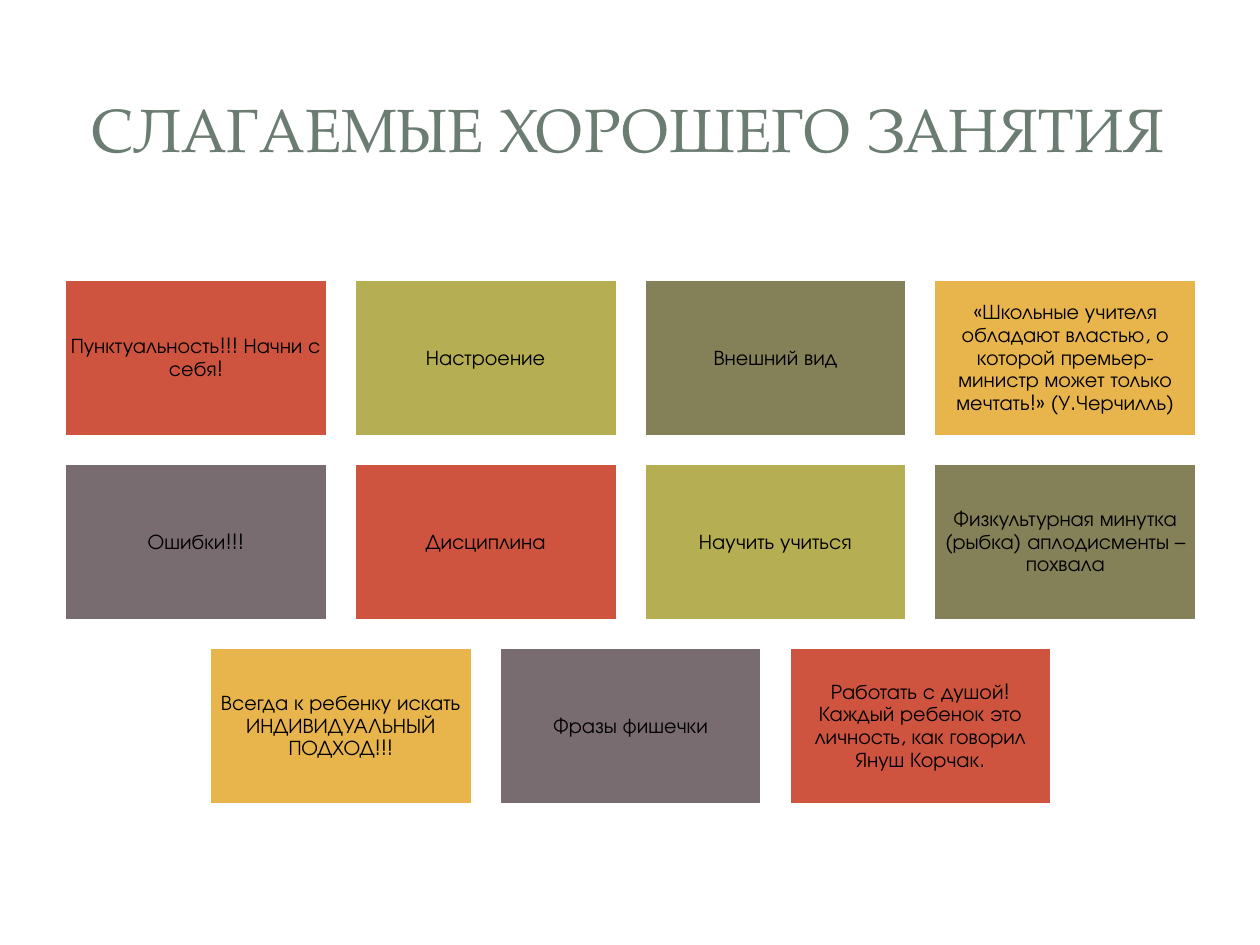
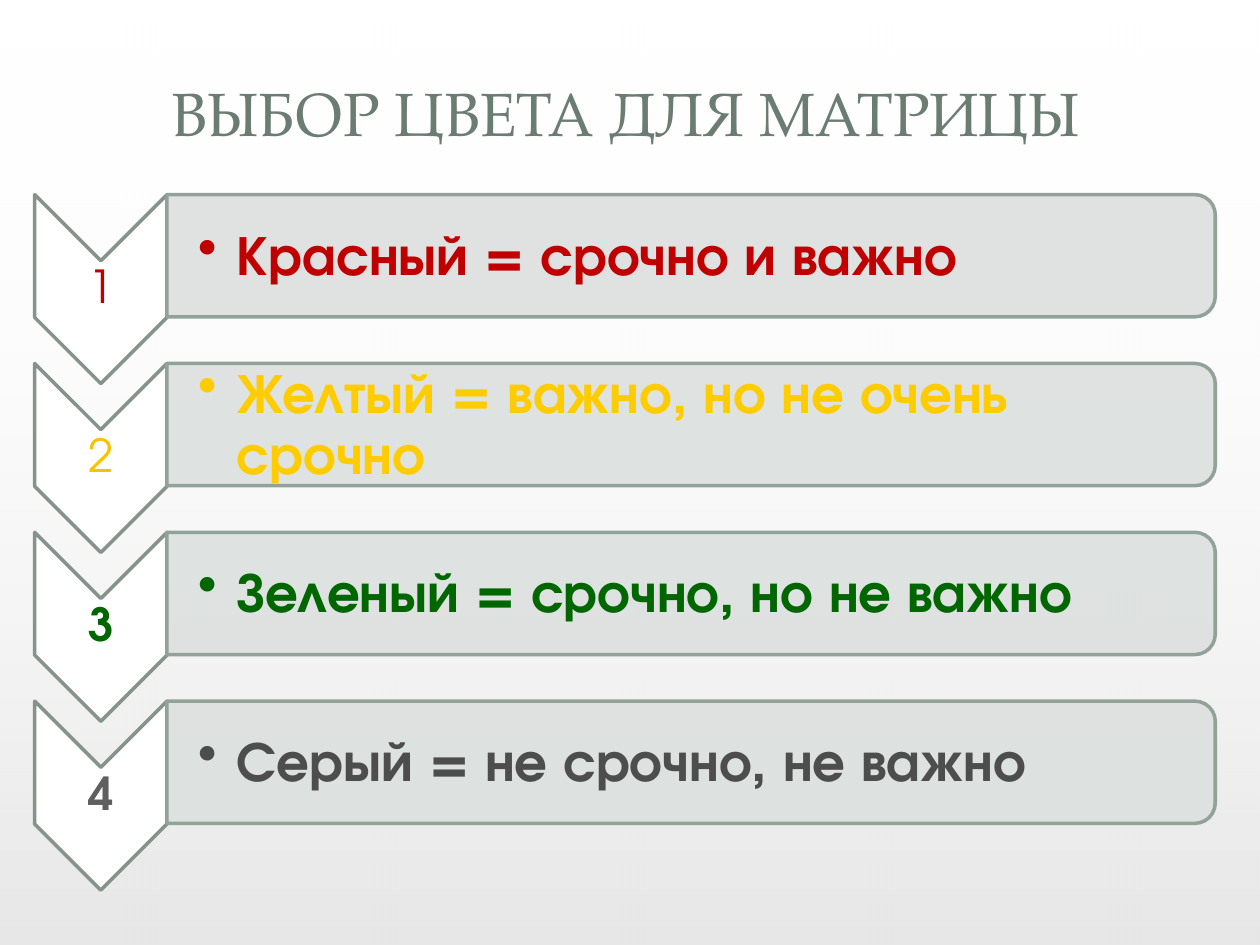
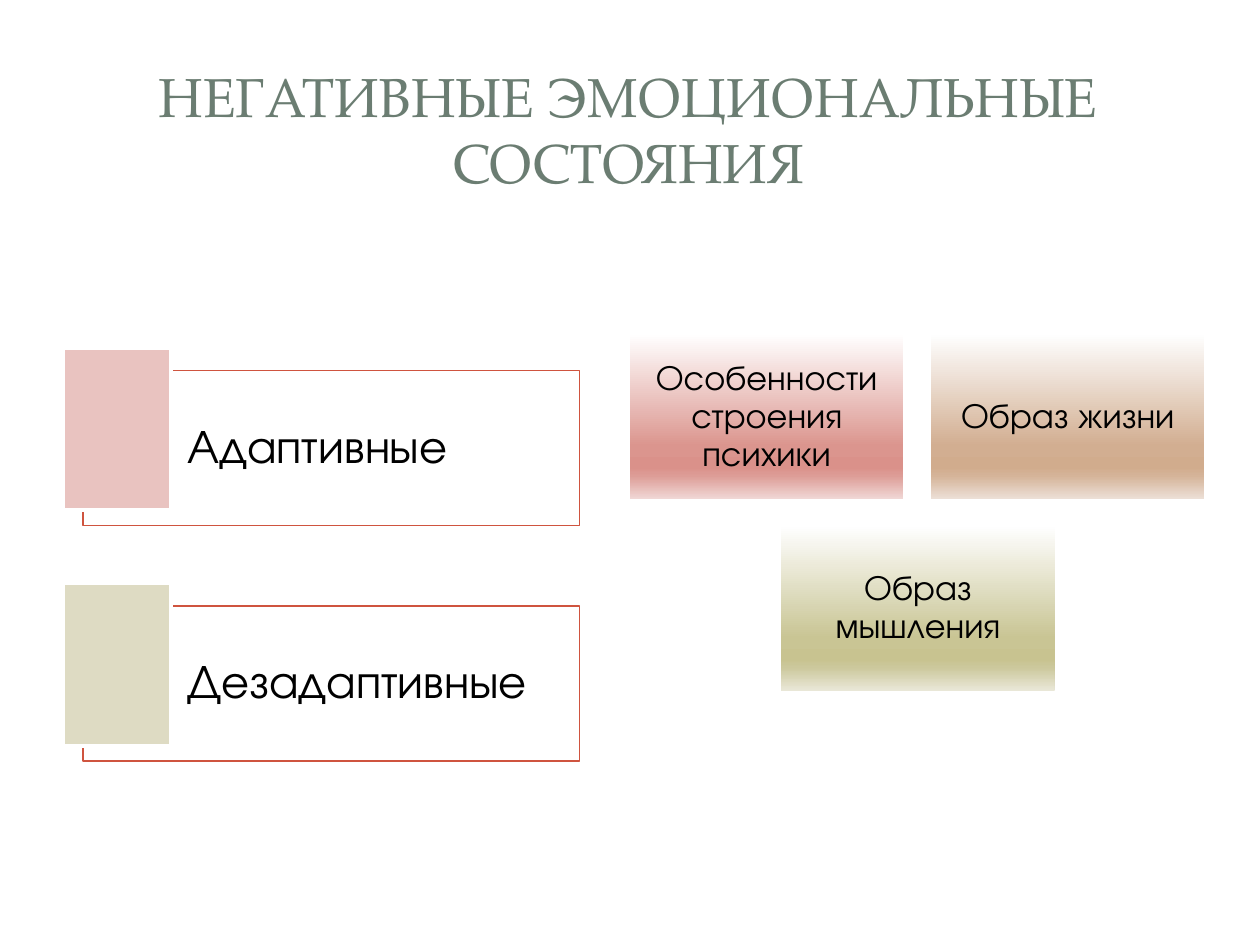
import pptx
import pptx.util
import pptx.dml.color
import pptx.enum.shapes
import pptx.enum.text
import pptx.oxml
import pptx.oxml.ns

PX = 9144  # EMU in one px, 100 px to the inch
HEX = {
    "white": "FFFFFF", "black": "000000", "title": "6B7D72",
    "red": "CF543F", "lime": "B5AE53", "moss": "848058",
    "gold": "E8B54D", "mauve": "786C71",
    "edge": "85938B", "rim": "93A299", "bar": "DCE0DE",
    "crimson": "C00000", "amber": "FFC000", "yellow": "FFCC00",
    "green": "006600", "gray": "5F5F5F", "slate": "4D4D4D",
    "rose": "E9C3C0", "sand": "DEDBC3",
}
HEAD, BODY = "TeX Gyre Pagella", "TeX Gyre Adventor"
KIND = pptx.enum.shapes.MSO_SHAPE
ALIGN = pptx.enum.text.PP_ALIGN
ANCHOR = pptx.enum.text.MSO_ANCHOR
NAME = pptx.oxml.ns.qn


def color(name):
    return pptx.dml.color.RGBColor.from_string(HEX[name])


def node(tag, inner="", **attrs):
    """Make one element of the drawing namespace."""
    text = "".join(f' {key}="{value}"' for key, value in attrs.items())
    space = pptx.oxml.ns.nsdecls("a")
    return pptx.oxml.parse_xml(f"<a:{tag} {space}{text}>{inner}</a:{tag}>")


class Deck:
    def __init__(self):
        self.file = pptx.Presentation()
        self.file.slide_width = 1000 * PX
        self.file.slide_height = 750 * PX
        self.slide = None

    def page(self):
        self.slide = self.file.slides.add_slide(self.file.slide_layouts[6])
        self.slide.background.fill.solid()
        self.slide.background.fill.fore_color.rgb = color("white")

    def shape(self, box, fill=None, line=None, width=2, kind=KIND.RECTANGLE,
              turn=0, alpha=None):
        item = self.slide.shapes.add_shape(kind, *(n * PX for n in box))
        item.shadow.inherit = False
        item.rotation = turn
        if fill:
            item.fill.solid()
            item.fill.fore_color.rgb = color(fill)
        if alpha is not None:
            tint = item._element.spPr.find(".//" + NAME("a:srgbClr"))
            tint.append(node("alpha", val=alpha * 1000))
        if line:
            item.line.color.rgb = color(line)
            item.line.width = pptx.util.Pt(width)
        else:
            item.line.fill.background()
        return item

    def blend(self, box, stops, angle):
        """Draw a box with a gradient of (place, hex, alpha) stops."""
        item = self.shape(box)
        inner = "".join(
            f'<a:gs pos="{place * 1000}"><a:srgbClr val="{tone}">'
            f'<a:alpha val="{alpha * 1000}"/></a:srgbClr></a:gs>'
            for place, tone, alpha in stops)
        inner = (f'<a:gsLst>{inner}</a:gsLst>'
                 f'<a:lin ang="{angle * 60000}" scaled="0"/>')
        geom = item._element.spPr.find(NAME("a:prstGeom"))
        geom.addnext(node("gradFill", inner, rotWithShape=1))
        return item

    def words(self, item, text, size, tone="black", font=BODY, bold=False,
              align=ALIGN.CENTER, inset=(5, 5, 5, 5), space=0.9, bullet=False):
        frame = item.text_frame
        frame.word_wrap = True
        frame.vertical_anchor = ANCHOR.MIDDLE
        (frame.margin_left, frame.margin_top, frame.margin_right,
         frame.margin_bottom) = (n * PX for n in inset)
        para = frame.paragraphs[0]
        para.text = text
        para.alignment = align
        para.line_spacing = space
        if bullet:
            props = para._p.get_or_add_pPr()
            props.set("marL", str(31 * PX))
            props.set("indent", str(-31 * PX))
            props.append(node("buChar", char="•"))
        para.font.name = font
        para.font.size = pptx.util.Pt(size)
        para.font.bold = bold
        para.font.color.rgb = color(tone)

    def label(self, box, text, size, **style):
        item = self.slide.shapes.add_textbox(*(n * PX for n in box))
        self.words(item, text, size, **style)

    def title(self, text, size=35, box=(47, 45, 903, 114)):
        self.label(box, text, size, tone="title", font=HEAD,
                   inset=(10, 5, 10, 5), space=1.0)


def grid(rows, mid, top, wide, high, gap):
    """Yield each text with its box; every row is centred on mid."""
    for r, row in enumerate(rows):
        left = mid - (len(row) * (wide + gap) - gap) // 2
        for c, text in enumerate(row):
            yield text, (left + c * (wide + gap), top + r * (high + gap),
                         wide, high)


def lesson(deck):
    deck.page()
    deck.title("СЛАГАЕМЫЕ ХОРОШЕГО ЗАНЯТИЯ")
    rows = [
        ["Пунктуальность!!! Начни с себя!", "Настроение", "Внешний вид",
         "«Школьные учителя обладают властью, о которой премьер-министр "
         "может только мечтать!» (У.Черчилль)"],
        ["Ошибки!!!", "Дисциплина", "Научить учиться",
         "Физкультурная минутка (рыбка) аплодисменты – похвала"],
        ["Всегда к ребенку искать ИНДИВИДУАЛЬНЫЙ ПОДХОД!!!", "Фразы фишечки",
         "Работать с душой! Каждый ребенок это личность, как говорил "
         "Януш Корчак."],
    ]
    fills = ["red", "lime", "moss", "gold", "mauve"]
    tiles = grid(rows, mid=500, top=222, wide=209, high=125, gap=21)
    for i, (text, box) in enumerate(tiles):
        tile = deck.shape(box, fills[i % len(fills)], "white")
        deck.words(tile, text, 12)


def matrix(deck):
    deck.page()
    deck.blend((0, 0, 1000, 750), [(0, "000000", 10), (100, "FFFFFF", 0)], 270)
    deck.title("ВЫБОР ЦВЕТА ДЛЯ МАТРИЦЫ", box=(28, 54, 937, 69))
    rows = [
        ("crimson", False, "crimson", "Красный = срочно и важно"),
        ("amber", False, "yellow", "Желтый = важно, но не очень срочно"),
        ("green", True, "green", "Зеленый = срочно, но не важно"),
        ("gray", True, "slate", "Серый = не срочно, не важно"),
    ]
    for i, (tone, bold, ink, text) in enumerate(rows):
        y = 134 * i
        # Arrow with its number
        deck.shape((5, 177 + y, 150, 105), "white", "edge",
                   kind=KIND.CHEVRON, turn=90)
        deck.label((28, 207 + y, 105, 45), str(i + 1), 26, tone=tone,
                   bold=bold, inset=(2, 2, 2, 2))
        # Bar with its meaning
        deck.shape((500, y - 213, 97, 832), "bar", "rim", turn=90, alpha=90,
                   kind=KIND.ROUND_2_SAME_RECTANGLE)
        deck.label((132, 160 + y, 828, 88), text, 32, tone=ink, bold=True,
                   align=ALIGN.LEFT, inset=(25, 2, 2, 2), bullet=True)


def moods(deck):
    deck.page()
    deck.title("НЕГАТИВНЫЕ ЭМОЦИОНАЛЬНЫЕ СОСТОЯНИЯ", 31.5)
    # Framed kinds with a colour block
    kinds = [("Адаптивные", "rose"), ("Дезадаптивные", "sand")]
    for i, (text, fill) in enumerate(kinds):
        y = 187 * i
        frame = deck.shape((66, 294 + y, 394, 123), "white", "red", 0.75,
                           alpha=40)
        deck.words(frame, text, 27, align=ALIGN.LEFT, inset=(83, 11, 11, 11))
        deck.shape((50, 276 + y, 86, 129), fill, "white")
    # Shaded causes
    places = (0, 68, 81, 86, 100)
    shades = [
        ("FFFEFE", "DB958E", "DA918A", "DD9D97", "F0D7D5"),
        ("FEFEFE", "D2AE91", "D1AC8D", "D5B499", "ECDFD6"),
        ("FEFEFE", "C9C594", "C8C390", "CCC89C", "E9E7D7"),
    ]
    rows = [["Особенности строения психики", "Образ жизни"],
            ["Образ мышления"]]
    tiles = grid(rows, mid=728, top=266, wide=217, high=130, gap=22)
    for (text, box), tones in zip(tiles, shades):
        stops = [(place, tone, 100) for place, tone in zip(places, tones)]
        deck.words(deck.blend(box, stops, 90), text, 20, inset=(8, 8, 8, 8))


def main():
    deck = Deck()
    lesson(deck)
    matrix(deck)
    moods(deck)
    deck.file.save("out.pptx")


if __name__ == "__main__":
    main()
